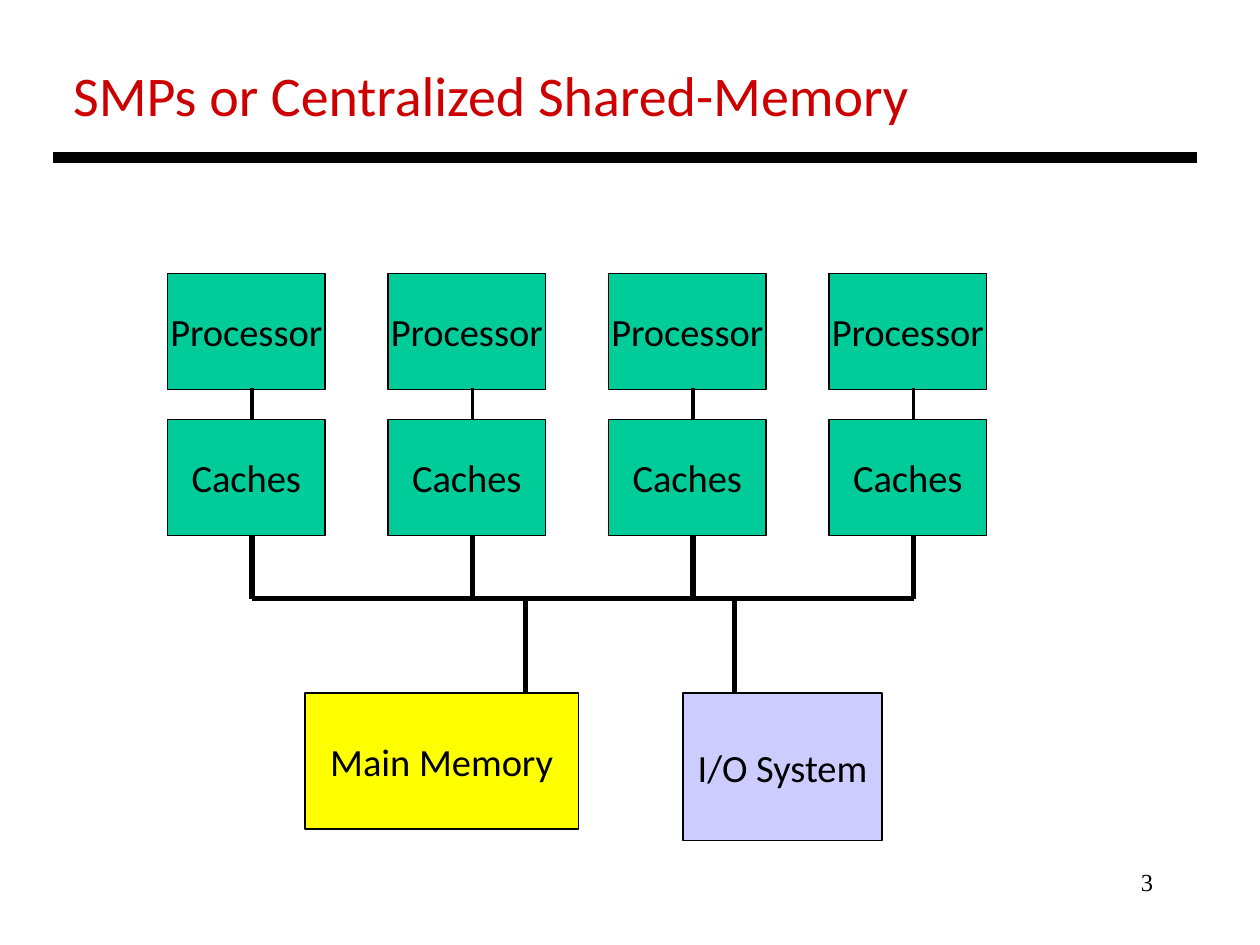
from dataclasses import dataclass

from lxml import etree
from pptx import Presentation
from pptx.dml.color import RGBColor
from pptx.enum.shapes import MSO_CONNECTOR, MSO_SHAPE
from pptx.enum.text import MSO_ANCHOR, PP_ALIGN
from pptx.oxml.ns import qn
from pptx.util import Inches, Pt

STRAIGHT = MSO_CONNECTOR.STRAIGHT
RECT = MSO_SHAPE.RECTANGLE
TOP, MIDDLE = MSO_ANCHOR.TOP, MSO_ANCHOR.MIDDLE
LEFT, CENTER, RIGHT = PP_ALIGN.LEFT, PP_ALIGN.CENTER, PP_ALIGN.RIGHT


@dataclass(frozen=True)
class Theme:
    """Colours, fonts and type sizes of the slide."""
    ink: str = "000000"
    title: str = "CC0000"
    node: str = "00CC99"
    memory: str = "FFFF00"
    system: str = "CCCCFF"
    font: str = "Calibri"
    serif: str = "Times New Roman"
    title_size: int = 32
    label_size: int = 22
    number_size: int = 14


class Deck:
    """Draws styled elements on the current slide."""

    def __init__(self, theme):
        self.theme = theme
        self.file = Presentation()
        self.file.slide_width, self.file.slide_height = Inches(10), Inches(7.5)
        self.slide = self.file.slides.add_slide(self.file.slide_layouts[5])

    def label(self, shape, text, size, color, font, align, anchor, wrap=False):
        frame = shape.text_frame
        frame.text = text
        frame.word_wrap = wrap
        frame.vertical_anchor = anchor
        para = frame.paragraphs[0]
        para.alignment = align
        para.font.size = Pt(size)
        para.font.name = font
        para.font.color.rgb = RGBColor.from_string(color)

    def title(self, text, x, y, w, h):
        shape = self.slide.shapes.title
        shape.left, shape.top = Inches(x), Inches(y)
        shape.width, shape.height = Inches(w), Inches(h)
        look = self.theme
        self.label(shape, text, look.title_size, look.title, look.font, LEFT, TOP)

    def number(self, text, x, y, w, h):
        shape = self.slide.shapes.add_textbox(Inches(x), Inches(y), Inches(w), Inches(h))
        look = self.theme
        self.label(shape, text, look.number_size, look.ink, look.serif, RIGHT, TOP, True)

    def box(self, text, fill, x, y, w, h):
        shape = self.slide.shapes.add_shape(RECT, Inches(x), Inches(y), Inches(w), Inches(h))
        look = self.theme
        shape.shadow.inherit = False
        shape.fill.solid()
        shape.fill.fore_color.rgb = RGBColor.from_string(fill)
        shape.line.color.rgb = RGBColor.from_string(look.ink)
        shape.line.width = Pt(0.75)
        self.label(shape, text, look.label_size, look.ink, look.font, CENTER, MIDDLE)

    def line(self, x1, y1, x2, y2, width):
        wire = self.slide.shapes.add_connector(
            STRAIGHT, Inches(x1), Inches(y1), Inches(x2), Inches(y2))
        wire.line.color.rgb = RGBColor.from_string(self.theme.ink)
        wire.line.width = Pt(width)
        etree.SubElement(wire.element.spPr, qn("a:effectLst"))


def main():
    theme = Theme()
    deck = Deck(theme)
    deck.title("SMPs or Centralized Shared-Memory", 0.48, 0.43, 6.9, 0.64)
    deck.line(0.42, 1.25, 9.5, 1.25, 6)
    deck.number("3", 7.17, 6.83, 2.08, 0.5)

    bus = 4.75
    ports = [2 + 1.75 * col for col in range(4)]
    for port in ports:
        for text, top in (("Processor", 2.17), ("Caches", 3.33)):
            deck.box(text, theme.node, port - 0.67, top, 1.25, 0.92)
        deck.line(port, 3.08, port, 3.33, 2.25)
        deck.line(port, 4.25, port, bus, 3)
    deck.line(ports[0], bus, ports[-1], bus, 3)

    deck.box("Main Memory", theme.memory, 2.42, 5.5, 2.17, 1.08)
    deck.box("I/O System", theme.system, 5.42, 5.5, 1.58, 1.17)
    for port in (4.17, 5.83):
        deck.line(port, bus, port, 5.5, 3)
    deck.file.save("out.pptx")


if __name__ == "__main__":
    main()
